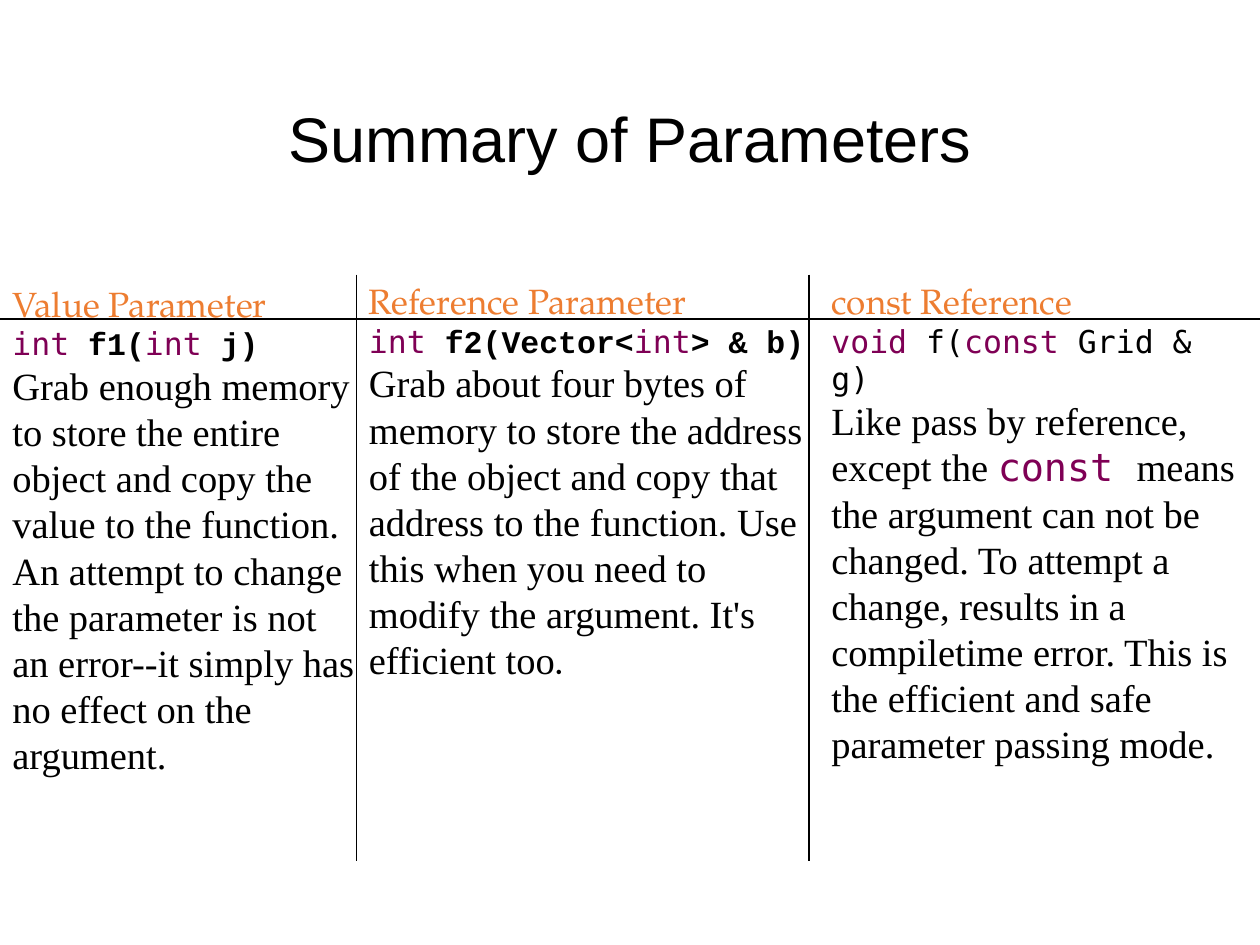
"""Build a slide that sums up three ways to pass a parameter."""
from lxml.etree import SubElement
from pptx import Presentation
from pptx.dml.color import RGBColor
from pptx.enum.shapes import MSO_CONNECTOR as Link
from pptx.enum.text import MSO_ANCHOR as Anchor, PP_ALIGN as Align
from pptx.oxml.ns import qn
from pptx.util import Inches, Pt

BLACK = RGBColor(0x00, 0x00, 0x00)
ORANGE = RGBColor(0xED, 0x7D, 0x31)
PLUM = RGBColor(0x7F, 0x00, 0x55)

MONO, SERIF, HEAD = "DejaVu Sans Mono", "Times New Roman", "TeX Gyre Pagella"
STYLES = {
    "title": (36, "Arial", BLACK, False),
    "head": (20, HEAD, ORANGE, False),
    "key": (18, MONO, PLUM, False),
    "code": (18, "Courier New", BLACK, True),
    "plain": (18, MONO, BLACK, False),
    "body": (22, SERIF, BLACK, False),
    "dot": (22, HEAD, BLACK, False),
    "word": (22, MONO, PLUM, False),
}

deck = Presentation()
deck.slide_width, deck.slide_height = Inches(10), Inches(7.5)
slide = deck.slides.add_slide(deck.slide_layouts[6])
wide, high = deck.slide_width, deck.slide_height


def add_text(left, top, width, height, lines):
    box = slide.shapes.add_textbox(Inches(left), Inches(top), Inches(width), Inches(height))
    frame = box.text_frame
    frame.word_wrap = True
    for i, line in enumerate(lines):
        para = frame.add_paragraph() if i else frame.paragraphs[0]
        for style, text in line:
            run = para.add_run()
            run.text = text
            size, run.font.name, run.font.color.rgb, run.font.bold = STYLES[style]
            run.font.size = Pt(size)
    return frame


def add_rule(x1, y1, x2, y2):
    rule = slide.shapes.add_connector(Link.STRAIGHT, x1, y1, x2, y2)
    rule.line.color.rgb = BLACK
    rule.line.width = Pt(1)
    SubElement(rule.element.spPr, qn("a:effectLst"))


title = add_text(0.69, 0.4, 8.62, 1.45, [[("title", "Summary of Parameters")]])
title.vertical_anchor = Anchor.MIDDLE
title.paragraphs[0].alignment = Align.CENTER
title.paragraphs[0].line_spacing = 0.9

COLUMNS = [
    (0, 2.19, 2.92, 4.07, [
        [("head", "Value Parameter")],
        [("key", "int "), ("code", "f1("), ("key", "int "), ("code", "j)")],
        [("body", "Grab enough memory to store the entire object and copy "
                  "the value to the function.")],
        [("body", "An attempt to change the parameter is not an error--it "
                  "simply has no effect on the argument.")],
    ]),
    (2.83, 2.17, 3.75, 3.94, [
        [("head", "Reference Parameter")],
        [("key", "int "), ("code", "f2(Vector<"), ("key", "int"), ("code", "> & b)")],
        [("body", "Grab about four bytes of memory to store the address of the "
                  "object and copy that address to the function. Use this when "
                  "you need to modify the argument. It's efficient too"),
         ("dot", ".")],
    ]),
    (6.5, 2.17, 3.5, 4.07, [
        [("head", "const Reference")],
        [("key", "void"), ("plain", " f("), ("key", "const"), ("plain", " Grid & g)")],
        [("body", "Like pass by reference, except the "), ("word", "const "),
         ("body", "means the argument can not be changed. To attempt a change, "
                  "results in a compiletime error. This is the efficient and "
                  "safe parameter passing mode.")],
    ]),
]
for column in COLUMNS:
    add_text(*column)

for x in (2.83, 6.42):
    add_rule(Inches(x), Inches(2.18), Inches(x), Inches(6.83))
add_rule(0, Inches(2.53), wide, Inches(2.53))

deck.save("out.pptx")
